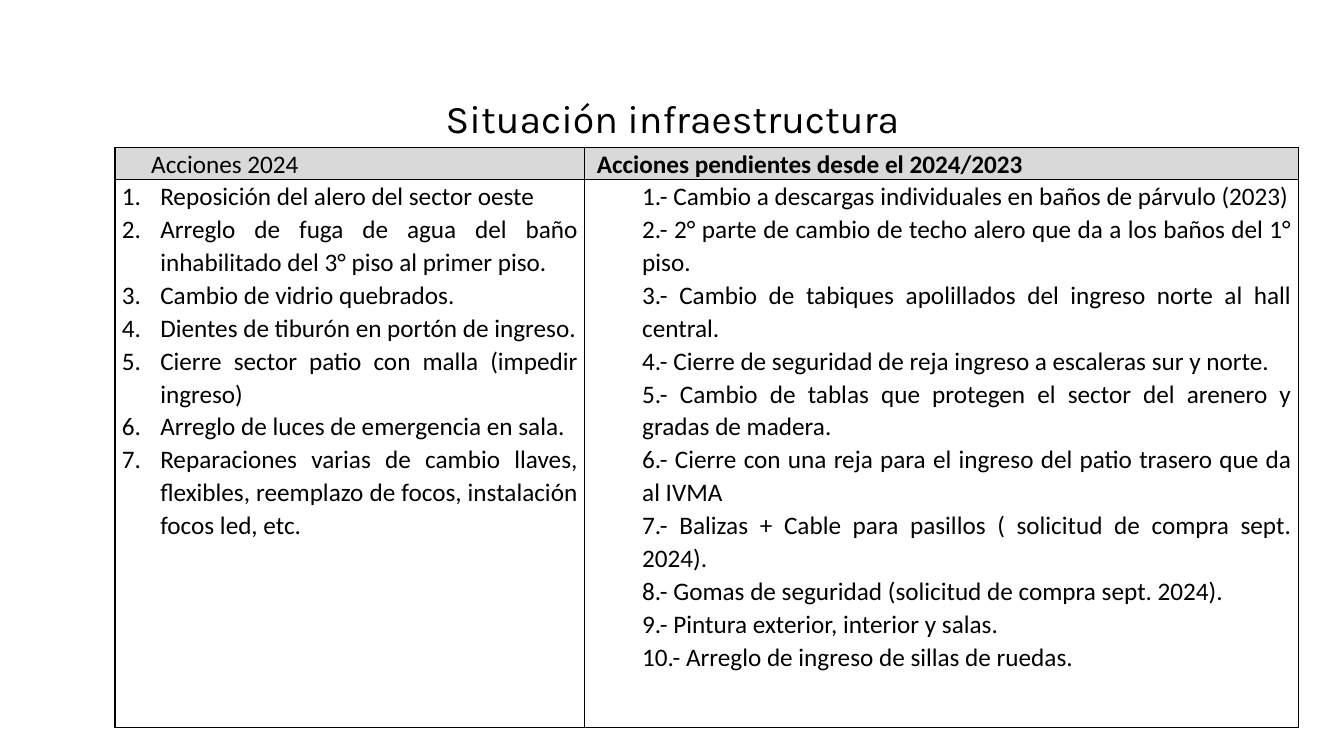
from pptx import Presentation
from pptx.dml.color import RGBColor
from pptx.enum.text import MSO_ANCHOR, PP_ALIGN
from pptx.oxml import parse_xml
from pptx.oxml.ns import nsdecls
from pptx.util import Inches, Pt

CENTER, JUSTIFY = PP_ALIGN.CENTER, PP_ALIGN.JUSTIFY
TOP = MSO_ANCHOR.TOP

GRID = 0.1  # inches per grid column and per grid row
BLACK, GREY = "000000", "D9D9D9"

ACTIONS_2024 = [
    "Reposición del alero del sector oeste",
    "Arreglo de fuga de agua del baño inhabilitado del 3° piso al primer piso.",
    "Cambio de vidrio quebrados.",
    "Dientes de tiburón en portón de ingreso.",
    "Cierre sector patio con malla (impedir ingreso)",
    "Arreglo de luces de emergencia en sala.",
    "Reparaciones varias de cambio llaves, flexibles, reemplazo de focos, "
    "instalación focos led, etc.",
]
PENDING_ACTIONS = [
    "1.- Cambio a descargas individuales en baños de párvulo (2023)",
    "2.- 2° parte de cambio de techo alero que da a los baños del 1° piso.",
    "3.- Cambio de tabiques apolillados del ingreso norte al hall central.",
    "4.- Cierre de seguridad de reja ingreso a escaleras sur y norte.",
    "5.- Cambio de tablas que protegen el sector del arenero y gradas de madera.",
    "6.- Cierre con una reja para el ingreso del patio trasero que da al IVMA",
    "7.- Balizas + Cable para pasillos ( solicitud de compra sept. 2024).",
    "8.- Gomas de seguridad (solicitud de compra sept. 2024).",
    "9.- Pintura exterior, interior y salas.",
    "10.- Arreglo de ingreso de sillas de ruedas.",
]


def color(hex_code):
    return RGBColor.from_string(hex_code)


def units(count):
    return Inches(count * GRID)


def apply(target, values):
    for name, value in values.items():
        setattr(target, name, value)


class SlideBuilder:
    title_font = {"name": "Karla", "size": Pt(28)}
    table_font = {"name": "Calibri", "size": Pt(18)}
    cell_format = {"margin_left": Inches(0.07), "margin_right": Inches(0.07),
                   "margin_top": 0, "margin_bottom": 0, "vertical_anchor": TOP}

    def __init__(self, slide):
        self.slide = slide

    def add_text(self, paragraph, text, font, **layout):
        apply(paragraph, layout)
        run = paragraph.add_run()
        run.text = text
        apply(run.font, font)
        run.font.color.rgb = color(BLACK)

    def title(self, text, left, top, width, height):
        box = self.slide.shapes.add_textbox(*map(units, (left, top, width, height)))
        box.text_frame.word_wrap = True
        self.add_text(box.text_frame.paragraphs[0], text, self.title_font,
                      alignment=CENTER)

    def table(self, left, top, widths, heights):
        frame = self.slide.shapes.add_table(
            len(heights), len(widths), units(left), units(top),
            units(sum(widths)), units(sum(heights)))
        table = frame.table
        for column, width in zip(table.columns, widths):
            column.width = units(width)
        for row, height in zip(table.rows, heights):
            row.height = units(height)
        return table

    def cell(self, cell, lines, indent, fill=None, bold=False, numbered=False):
        apply(cell, self.cell_format)
        if fill:
            cell.fill.solid()
            cell.fill.fore_color.rgb = color(fill)
        else:
            cell.fill.background()
        self.borders(cell)
        frame = cell.text_frame
        for index, line in enumerate(lines):
            paragraph = frame.add_paragraph() if index else frame.paragraphs[0]
            self.add_text(paragraph, line, {**self.table_font, "bold": bold},
                          alignment=JUSTIFY, line_spacing=1.07)
            self.indent(paragraph, indent, numbered)

    def indent(self, paragraph, inches, numbered):
        properties = paragraph._p.get_or_add_pPr()
        properties.set("marL", str(Inches(inches)))
        properties.set("indent", str(-Inches(inches) if numbered else 0))
        if numbered:
            properties.append(parse_xml(
                f'<a:buAutoNum {nsdecls("a")} type="arabicPeriod"/>'))

    def borders(self, cell):
        properties = cell._tc.get_or_add_tcPr()
        for position, side in enumerate("LRTB"):
            properties.insert(position, parse_xml(
                f'<a:ln{side} {nsdecls("a")} w="{Pt(1)}"><a:solidFill>'
                f'<a:srgbClr val="{BLACK}"/></a:solidFill></a:ln{side}>'))


def main():
    deck = Presentation()
    deck.slide_width, deck.slide_height = Inches(13.33), Inches(7.5)
    builder = SlideBuilder(deck.slides.add_slide(deck.slide_layouts[6]))

    # Title
    builder.title("Situación infraestructura", 28.3, 8.9, 76.8, 5.7)

    # Table of done and pending actions
    actions = builder.table(11.4, 14.6, widths=(46.6, 70.8), heights=(3.2, 54.4))

    # Header row
    builder.cell(actions.cell(0, 0), ["Acciones 2024"], 0.29, fill=GREY)
    builder.cell(actions.cell(0, 1), ["Acciones pendientes desde el 2024/2023"],
                 0.05, fill=GREY, bold=True)

    # Action lists
    builder.cell(actions.cell(1, 0), ACTIONS_2024, 0.38, numbered=True)
    builder.cell(actions.cell(1, 1), PENDING_ACTIONS, 0.5)

    deck.save("out.pptx")


if __name__ == "__main__":
    main()
